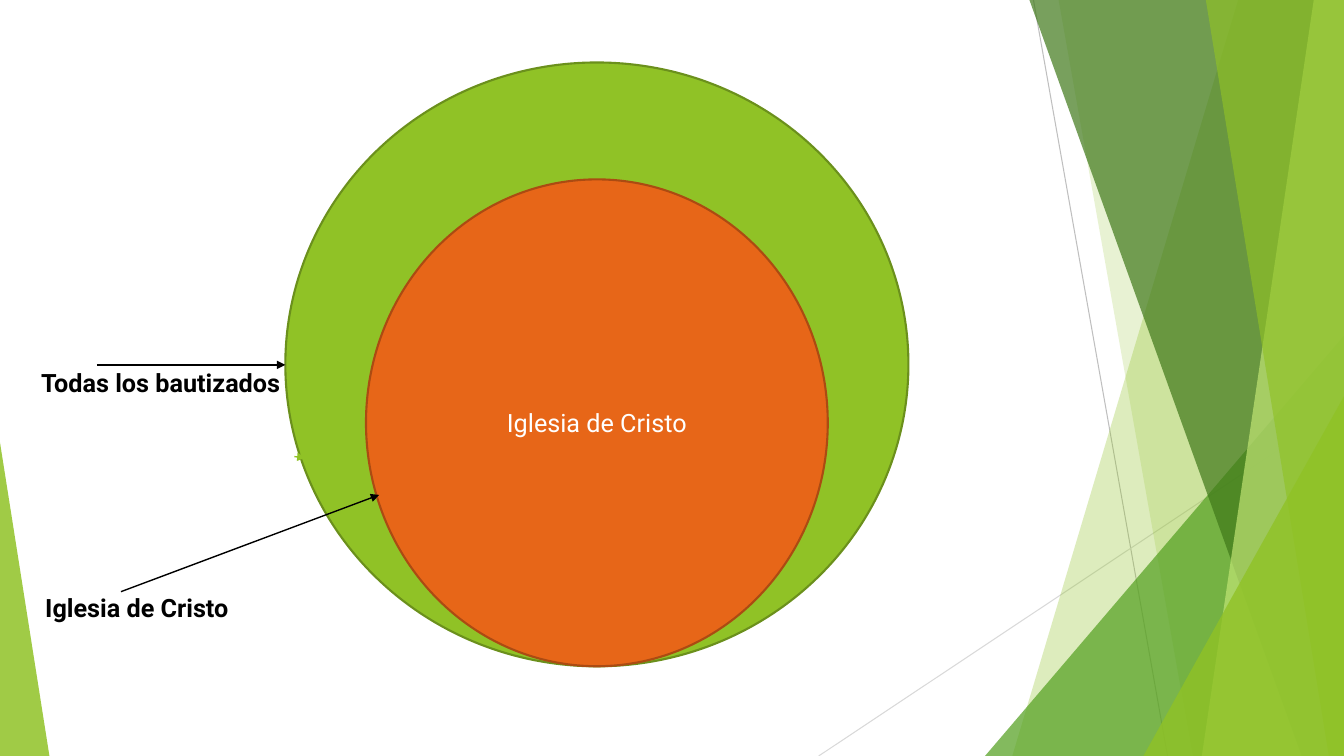
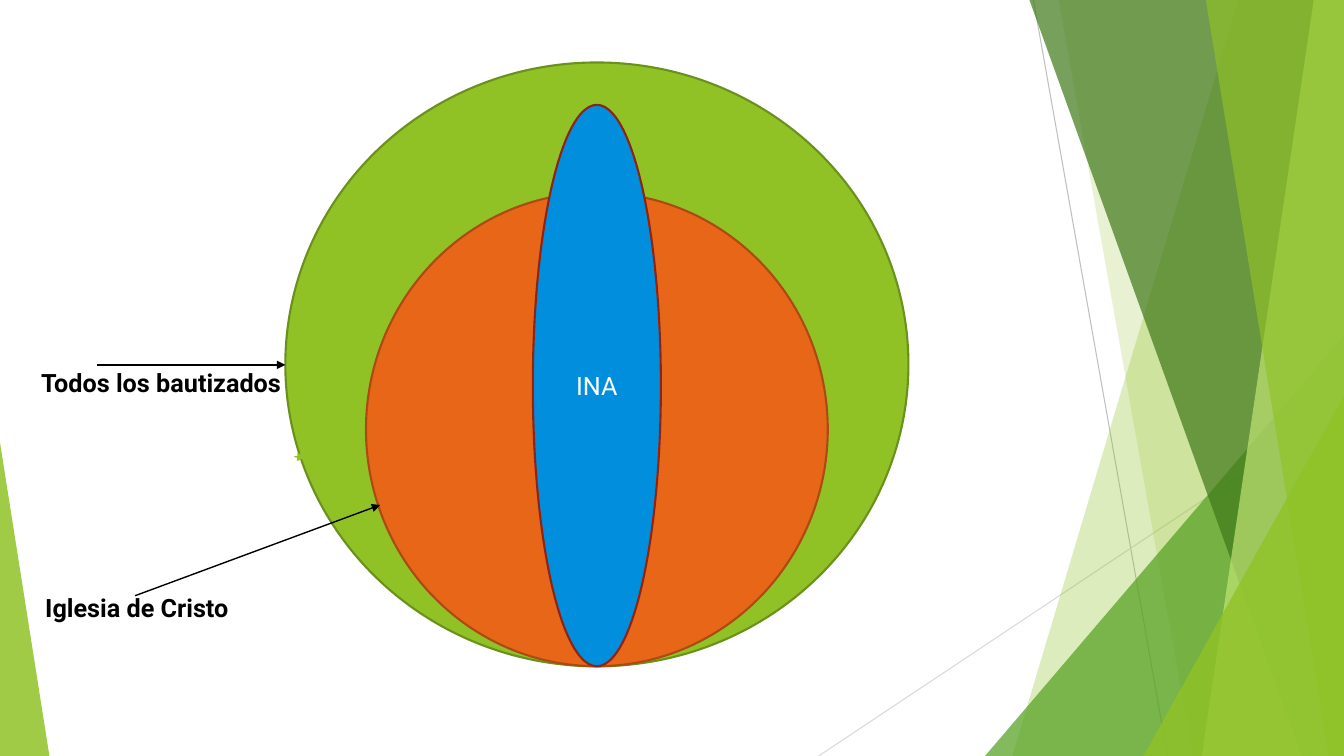
import pptx
import pptx.dml.color
import pptx.enum.shapes
import pptx.enum.text
import pptx.oxml.ns
import pptx.util
from lxml import etree

Inches = pptx.util.Inches
Pt = pptx.util.Pt
qn = pptx.oxml.ns.qn
SHAPES = pptx.enum.shapes.MSO_SHAPE
STRAIGHT = pptx.enum.shapes.MSO_CONNECTOR.STRAIGHT

GREEN = "90C226"
DARK_GREEN = "3F7819"
MID_GREEN = "54A021"
PALE_GREEN = "C0E474"
ORANGE = "E76618"
BLUE = "018EDD"
BLACK = "000000"
WHITE = "FFFFFF"
FONT = "Roboto"
WIDTH, HEIGHT = 13.33, 7.5


def rgb(color):
    return pptx.dml.color.RGBColor.from_string(color)


def add_line(slide, start, end, color, width, arrow=False):
    line = slide.shapes.add_connector(STRAIGHT, *[Inches(v) for v in (*start, *end)])
    line.line.color.rgb = rgb(color)
    line.line.width = Pt(width)
    properties = line.element.spPr
    if arrow:
        etree.SubElement(properties.find(qn("a:ln")), qn("a:tailEnd"), type="triangle")
    etree.SubElement(properties, qn("a:effectLst"))


presentation = pptx.Presentation()
presentation.slide_width = Inches(WIDTH)
presentation.slide_height = Inches(HEIGHT)
layout = presentation.slide_layouts[6]
slides = [presentation.slides.add_slide(layout) for _ in range(2)]

# Backdrop: drawn once, then moved to the layout that both slides share
canvas = slides[0]
add_line(canvas, (10.25, 0), (11.58, HEIGHT), "BFBFBF", 0.75)
add_line(canvas, (WIDTH, 4.03), (8.12, HEIGHT), "D9D9D9", 0.75)

# Bands run to the right edge: (top x, bottom x, color, opacity)
# Triangles stand on the bottom edge: (left, top, width, apex, color, opacity)
facets = [
    (12.28, 10.04, GREEN, 30),
    (10.5, 11.83, GREEN, 20),
    (9.77, 3.33, 3.56, 1, MID_GREEN, 72),
    (10.21, 12.91, DARK_GREEN, 70),
    (13.03, 11.92, PALE_GREEN, 70),
    (11.96, 13.18, GREEN, 65),
    (11.34, 3.93, 1.99, 1, GREEN, 80),
    (0, 4.39, 0.49, 0, GREEN, 85),
]
for *geometry, color, opacity in facets:
    if len(geometry) == 2:
        top_x, bottom_x = geometry
        outline = canvas.shapes.build_freeform(Inches(top_x), 0)
        corners = [(WIDTH, 0), (WIDTH, HEIGHT), (bottom_x, HEIGHT)]
        outline.add_line_segments([(Inches(x), Inches(y)) for x, y in corners])
        facet = outline.convert_to_shape()
    else:
        left, top, width, apex = geometry
        facet = canvas.shapes.add_shape(
            SHAPES.ISOSCELES_TRIANGLE,
            Inches(left), Inches(top), Inches(width), Inches(HEIGHT - top))
        facet.adjustments[0] = apex
    facet.shadow.inherit = False
    facet.line.fill.background()
    facet.fill.solid()
    facet.fill.fore_color.rgb = rgb(color)
    fill_color = facet.element.spPr.find(qn("a:solidFill")).find(qn("a:srgbClr"))
    etree.SubElement(fill_color, qn("a:alpha"), val=str(opacity * 1000))

for part in list(canvas.shapes):
    layout.element.cSld.spTree.append(part.element)

# Diagrams: ellipses share a centre line and a base
CENTER_X, BASE = 5.92, 6.61
diagrams = [
    {
        "ellipses": [  # width, height, fill, outline, text
            (6.18, 5.99, GREEN, "6B901C", ""),
            (4.58, 4.83, ORANGE, "AB4B12", "Iglesia de Cristo"),
        ],
        "church arrow": ((1.2, 5.87), (3.76, 4.91)),
        "baptized": "Todas los bautizados",
    },
    {
        "ellipses": [
            (6.18, 5.99, GREEN, "6B901C", ""),
            (4.58, 4.7, ORANGE, "AB4B12", ""),
            (1.27, 5.57, BLUE, "912313", "INA"),
        ],
        "church arrow": ((1.34, 5.91), (3.77, 5.01)),
        "baptized": "Todos los bautizados",
    },
]
for slide, diagram in zip(slides, diagrams):
    for width, height, fill, outline, text in diagram["ellipses"]:
        group = slide.shapes.add_shape(
            SHAPES.OVAL, Inches(CENTER_X - width / 2), Inches(BASE - height),
            Inches(width), Inches(height))
        group.shadow.inherit = False
        group.fill.solid()
        group.fill.fore_color.rgb = rgb(fill)
        group.line.color.rgb = rgb(outline)
        group.line.width = Pt(1.5)
        if text:
            group.text_frame.text = text
            group.text_frame.vertical_anchor = pptx.enum.text.MSO_ANCHOR.MIDDLE
            caption = group.text_frame.paragraphs[0]
            caption.alignment = pptx.enum.text.PP_ALIGN.CENTER
            caption.font.name = FONT
            caption.font.size = Pt(18)
            caption.font.color.rgb = rgb(WHITE)

    # Arrows
    add_line(slide, (2.92, 4.53), (3.03, 4.54), GREEN, 1, arrow=True)
    add_line(slide, (0.96, 3.62), (2.83, 3.62), BLACK, 1, arrow=True)
    add_line(slide, *diagram["church arrow"], BLACK, 1, arrow=True)

    # Labels
    labels = [(0.35, 5.83, 2.07, "Iglesia de Cristo"),
              (0.31, 3.59, 2.6, diagram["baptized"])]
    for left, top, width, text in labels:
        label = slide.shapes.add_textbox(
            Inches(left), Inches(top), Inches(width), Inches(0.4))
        label.text_frame.word_wrap = False
        label.text_frame.auto_size = pptx.enum.text.MSO_AUTO_SIZE.SHAPE_TO_FIT_TEXT
        label.text_frame.text = text
        wording = label.text_frame.paragraphs[0]
        wording.font.name = FONT
        wording.font.size = Pt(18)
        wording.font.bold = True
        wording.font.color.rgb = rgb(BLACK)

presentation.save("out.pptx")
